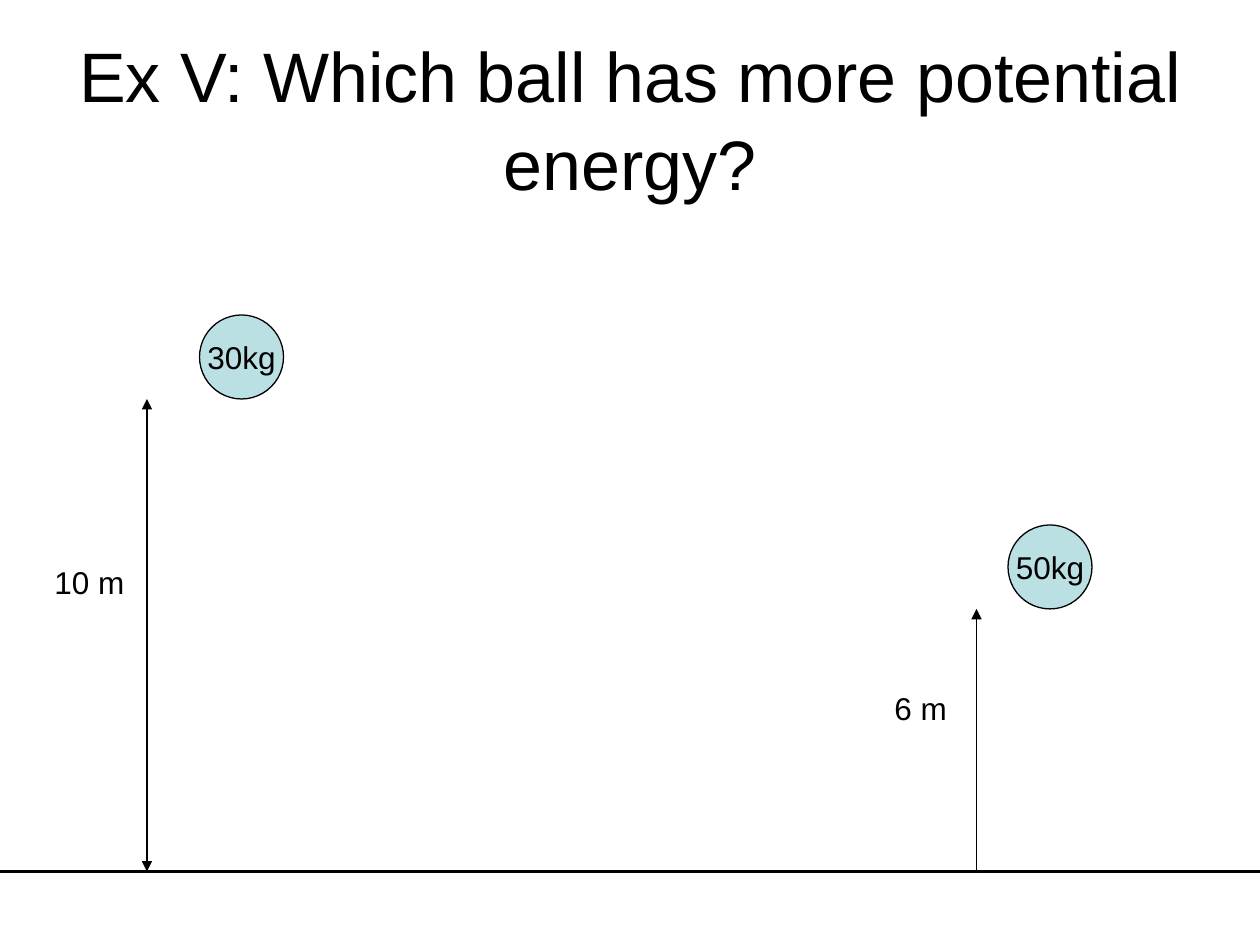
from lxml.etree import SubElement
from pptx import Presentation
from pptx.dml.color import RGBColor
from pptx.enum.shapes import MSO_CONNECTOR, MSO_SHAPE
from pptx.enum.text import MSO_ANCHOR, MSO_AUTO_SIZE, PP_ALIGN
from pptx.oxml.ns import qn
from pptx.util import Pt

BLACK = RGBColor(0x00, 0x00, 0x00)
PALE_BLUE = RGBColor(0xBB, 0xE0, 0xE3)
GROUND = 498
BALL_SIZE = 48


def write(box, text, size=18, align=PP_ALIGN.LEFT, anchor=MSO_ANCHOR.TOP,
          wrap=True, fit=MSO_AUTO_SIZE.NONE, spacing=1.0):
    frame = box.text_frame
    frame.word_wrap = wrap
    frame.auto_size = fit
    frame.vertical_anchor = anchor
    para = frame.paragraphs[0]
    para.alignment = align
    para.line_spacing = spacing
    span = para.add_run()
    span.text = text
    span.font.size = Pt(size)
    span.font.name = "Arial"
    span.font.color.rgb = BLACK


def draw_line(page, start, end, width=0.75, arrows=()):
    line = page.shapes.add_connector(
        MSO_CONNECTOR.STRAIGHT, *map(Pt, start), *map(Pt, end))
    line.line.color.rgb = BLACK
    line.line.width = Pt(width)
    outline = line.line._get_or_add_ln()
    for arrow in arrows:
        SubElement(outline, qn(arrow), type="triangle")
    SubElement(line._element.spPr, qn("a:effectLst"))


deck = Presentation()
deck.slide_width, deck.slide_height = Pt(720), Pt(540)
page = deck.slides.add_slide(deck.slide_layouts[5])

title = page.shapes.title
title.left, title.top, title.width, title.height = Pt(36), Pt(21.6), Pt(648), Pt(90)
write(title, "Ex V: Which ball has more potential energy?", size=40,
      align=PP_ALIGN.CENTER, anchor=MSO_ANCHOR.MIDDLE, spacing=1.05)

draw_line(page, (0, GROUND), (720, GROUND), width=2)

balls = [
    ("30kg", 114, 180, "10 m", 24, 318, 84, ("a:headEnd", "a:tailEnd")),
    ("50kg", 576, 300, "6 m", 504, 390, 558, ("a:tailEnd",)),
]
for mass, left, top, height, label_left, label_top, arrow_x, arrows in balls:
    ball = page.shapes.add_shape(
        MSO_SHAPE.OVAL, Pt(left), Pt(top), Pt(BALL_SIZE), Pt(BALL_SIZE))
    ball.shadow.inherit = False
    ball.fill.solid()
    ball.fill.fore_color.rgb = PALE_BLUE
    ball.line.color.rgb = BLACK
    ball.line.width = Pt(0.75)
    write(ball, mass, align=PP_ALIGN.CENTER, anchor=MSO_ANCHOR.MIDDLE, wrap=False)

    draw_line(page, (arrow_x, GROUND), (arrow_x, top + BALL_SIZE), arrows=arrows)

    label = page.shapes.add_textbox(Pt(label_left), Pt(label_top), Pt(60), Pt(28.8))
    write(label, height, fit=MSO_AUTO_SIZE.SHAPE_TO_FIT_TEXT)

deck.save("out.pptx")
